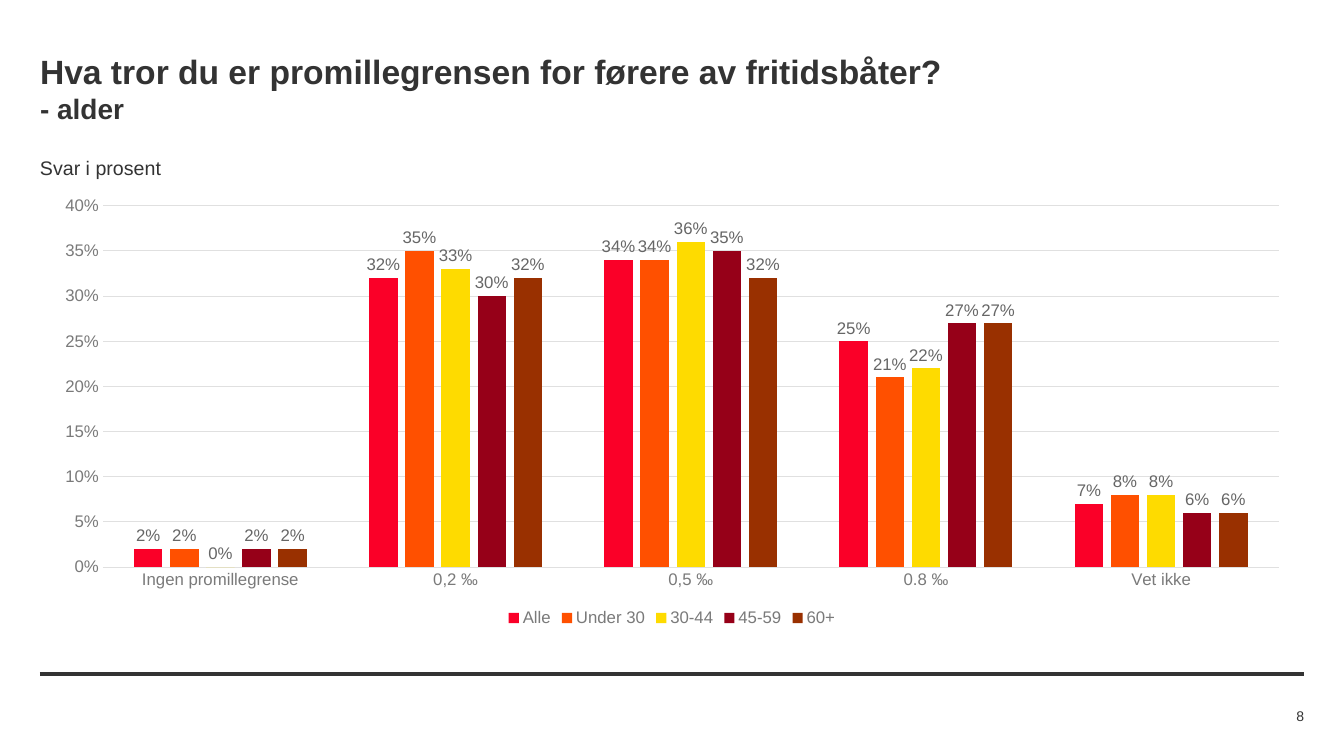
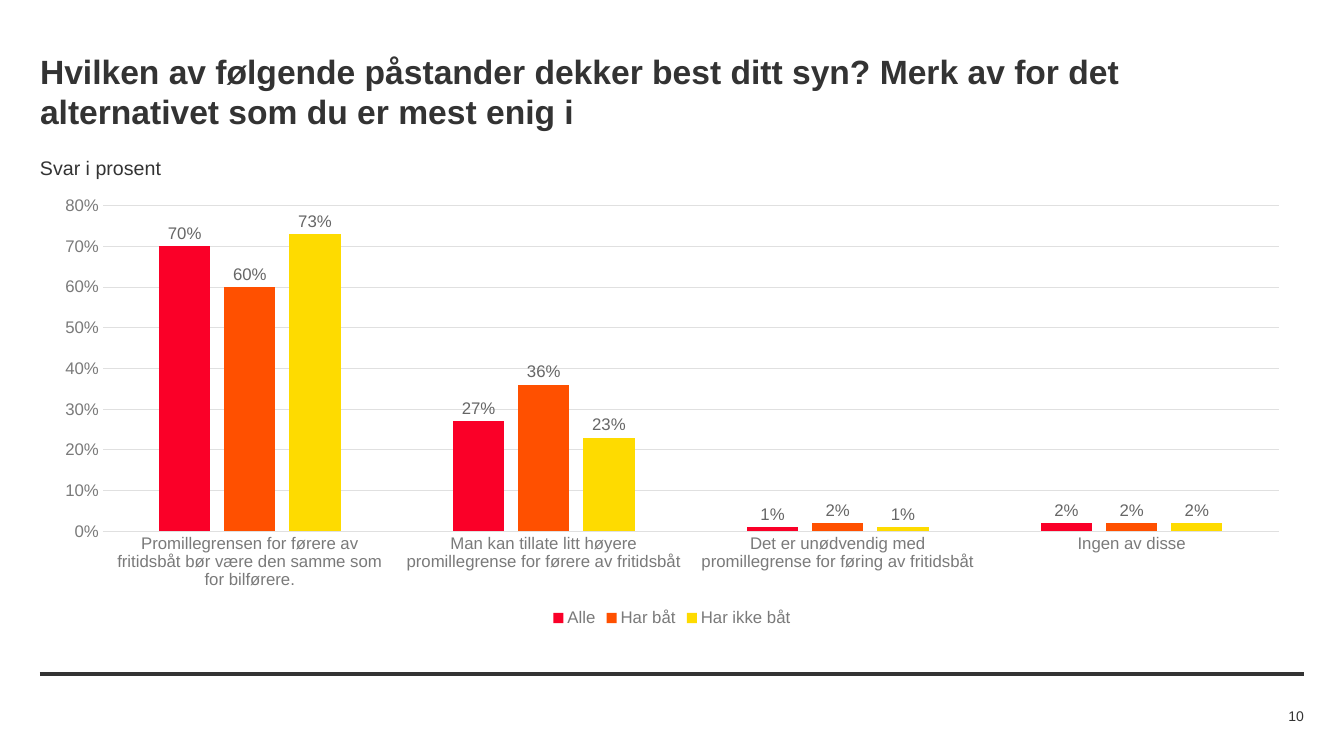
from lxml.etree import SubElement
from pptx import Presentation
from pptx.chart.data import CategoryChartData
from pptx.dml.color import RGBColor
from pptx.enum.chart import XL_CHART_TYPE, XL_LABEL_POSITION, XL_LEGEND_POSITION, XL_TICK_MARK
from pptx.enum.shapes import MSO_CONNECTOR
from pptx.enum.text import MSO_ANCHOR, PP_ALIGN
from pptx.oxml.ns import qn
from pptx.util import Emu, Pt

# Content
SLIDES = [
    {
        "title": [("Hva tror du er promillegrensen for førere av fritidsbåter?", 24),
                  ("- alder", 20)],
        "number": "8",
        "categories": ["Ingen promillegrense", "0,2 ‰", "0,5 ‰", "0.8 ‰", "Vet ikke"],
        "series": [
            ("Alle", (0.02, 0.32, 0.34, 0.25, 0.07)),
            ("Under 30", (0.02, 0.35, 0.34, 0.21, 0.08)),
            ("30-44", (0, 0.33, 0.36, 0.22, 0.08)),
            ("45-59", (0.02, 0.3, 0.35, 0.27, 0.06)),
            ("60+", (0.02, 0.32, 0.32, 0.27, 0.06)),
        ],
        "axis": {"minimum_scale": 0, "maximum_scale": 0.4, "major_unit": 0.05},
    },
    {
        "title": [("Hvilken av følgende påstander dekker best ditt syn? Merk av for det "
                   "alternativet som du er mest enig i", 24)],
        "number": "10",
        "categories": [
            "Promillegrensen for førere av fritidsbåt bør være den samme som for bilførere.",
            "Man kan tillate litt høyere promillegrense for førere av fritidsbåt",
            "Det er unødvendig med promillegrense for føring av fritidsbåt",
            "Ingen av disse",
        ],
        "series": [
            ("Alle", (0.7, 0.27, 0.01, 0.02)),
            ("Har båt", (0.6, 0.36, 0.02, 0.02)),
            ("Har ikke båt", (0.73, 0.23, 0.01, 0.02)),
        ],
        "axis": {"minimum_scale": 0, "maximum_scale": 0.8, "major_unit": 0.1},
    },
]
SUBTITLE = "Svar i prosent"

# Shared style
FONT = "Arial"
INK, AXIS_TEXT, LABEL_TEXT, GRID = "333333", "7A7A7A", "666666", "E0E0E0"
SERIES_COLORS = ["FA0028", "FF5000", "FEDB00", "960018", "993000"]
PERCENT = {"number_format": "0%", "number_format_is_linked": False}

# Layout in px
SLIDE_WIDTH, SLIDE_HEIGHT = 1344, 756
LEFT, RIGHT = 40, 1304
CONTENT_WIDTH = RIGHT - LEFT
TITLE_BOX = (LEFT, 51, CONTENT_WIDTH, 80)
SUBTITLE_BOX = (LEFT, 156, 200, 24)
CHART_BOX = (LEFT, 188, CONTENT_WIDTH, 443)
NUMBER_BOX = (RIGHT - 107, 705, 107, 22)
RULE_Y = 674


def px(length):
    return Emu(round(length * 914400 / 100.8))


def color(hex_value):
    return RGBColor.from_string(hex_value)


def set_attributes(target, values):
    for name, value in values.items():
        setattr(target, name, value)


def style_font(font, size, hex_value, bold=False):
    set_attributes(font, {"name": FONT, "size": Pt(size), "bold": bold})
    font.color.rgb = color(hex_value)


def style_line(line, hex_value, width):
    line.color.rgb = color(hex_value)
    line.width = Pt(width)


def add_text(slide, box, lines, bold=False, align=PP_ALIGN.LEFT, anchor=MSO_ANCHOR.TOP):
    frame = slide.shapes.add_textbox(*map(px, box)).text_frame
    set_attributes(frame, {"word_wrap": True, "vertical_anchor": anchor, "margin_left": 0,
                           "margin_top": 0, "margin_right": 0, "margin_bottom": 0})
    for index, (text, size) in enumerate(lines):
        paragraph = frame.add_paragraph() if index else frame.paragraphs[0]
        paragraph.alignment = align
        run = paragraph.add_run()
        run.text = text
        style_font(run.font, size, INK, bold)


def add_rule(slide):
    rule = slide.shapes.add_connector(
        MSO_CONNECTOR.STRAIGHT, px(LEFT), px(RULE_Y), px(RIGHT), px(RULE_Y))
    style_line(rule.line, INK, 3)
    SubElement(rule._element.spPr, qn("a:effectLst"))


def add_column_chart(slide, content):
    data = CategoryChartData(number_format="0%")
    data.categories = content["categories"]
    for name, values in content["series"]:
        data.add_series(name, values)
    chart = slide.shapes.add_chart(
        XL_CHART_TYPE.COLUMN_CLUSTERED, *map(px, CHART_BOX), data).chart
    style_font(chart.font, 10, INK)
    set_attributes(chart, {"has_title": False, "has_legend": True})
    set_attributes(chart.legend, {"position": XL_LEGEND_POSITION.BOTTOM,
                                  "include_in_layout": False})
    style_font(chart.legend.font, 12, AXIS_TEXT)

    # Axes
    for axis in (chart.category_axis, chart.value_axis):
        set_attributes(axis, {"major_tick_mark": XL_TICK_MARK.NONE,
                              "minor_tick_mark": XL_TICK_MARK.NONE})
        style_font(axis.tick_labels.font, 12, AXIS_TEXT)
    style_line(chart.category_axis.format.line, GRID, 0.75)
    set_attributes(chart.value_axis, content["axis"])
    set_attributes(chart.value_axis.tick_labels, PERCENT)
    chart.value_axis.format.line.fill.background()
    style_line(chart.value_axis.major_gridlines.format.line, GRID, 0.75)

    # Columns and their labels
    plot = chart.plots[0]
    set_attributes(plot, {"gap_width": 219, "overlap": -27, "vary_by_categories": False})
    for series, hex_value in zip(plot.series, SERIES_COLORS):
        series.format.fill.solid()
        series.format.fill.fore_color.rgb = color(hex_value)
        labels = series.data_labels
        set_attributes(labels, {**PERCENT, "show_value": True,
                                "position": XL_LABEL_POSITION.OUTSIDE_END})
        style_font(labels.font, 12, LABEL_TEXT)


def main():
    presentation = Presentation()
    set_attributes(presentation, {"slide_width": px(SLIDE_WIDTH),
                                  "slide_height": px(SLIDE_HEIGHT)})
    for content in SLIDES:
        slide = presentation.slides.add_slide(presentation.slide_layouts[6])
        add_rule(slide)
        add_column_chart(slide, content)
        add_text(slide, TITLE_BOX, content["title"], bold=True)
        add_text(slide, SUBTITLE_BOX, [(SUBTITLE, 14)])
        add_text(slide, NUMBER_BOX, [(content["number"], 10)],
                 align=PP_ALIGN.RIGHT, anchor=MSO_ANCHOR.MIDDLE)
    presentation.save("out.pptx")


if __name__ == "__main__":
    main()
